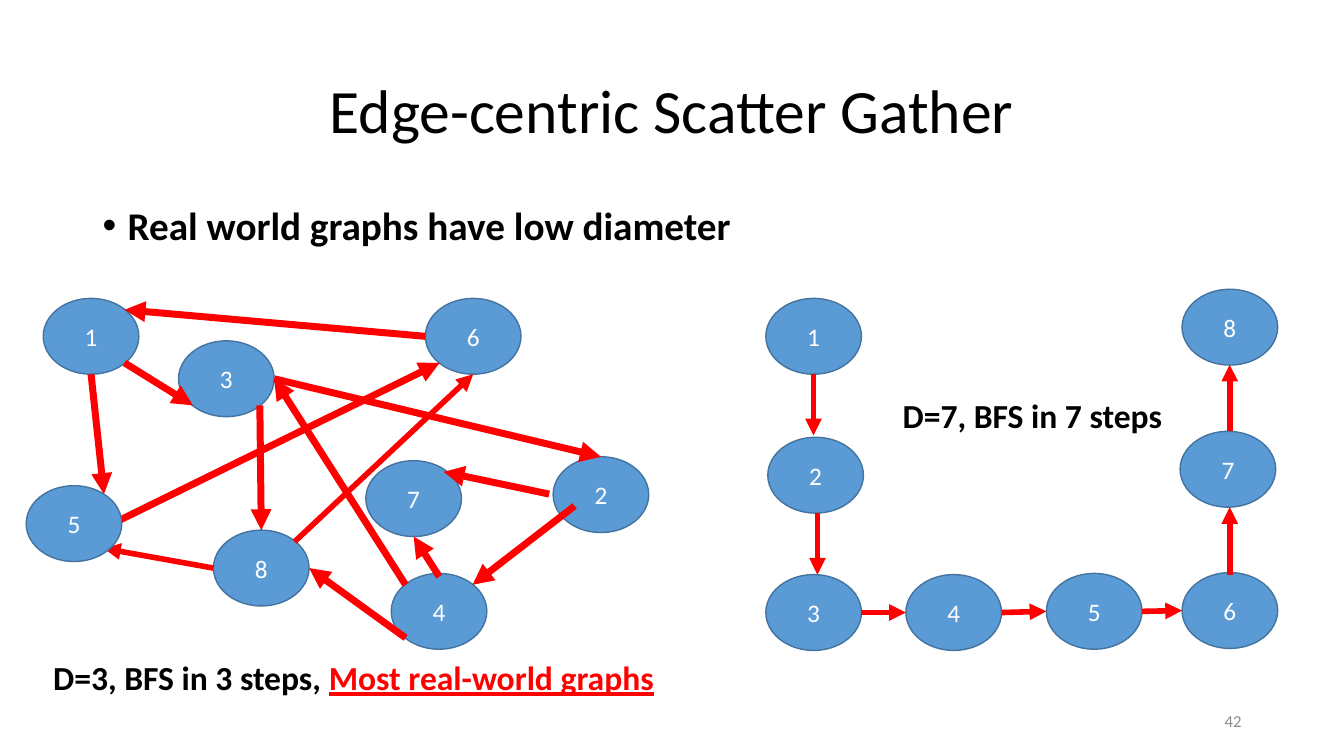
import dataclasses
import pptx
import pptx.util
import pptx.dml.color
import pptx.enum.shapes
import pptx.enum.text
import pptx.oxml.ns
from lxml import etree

Cm = pptx.util.Cm
Pt = pptx.util.Pt
Align = pptx.enum.text.PP_ALIGN
Anchor = pptx.enum.text.MSO_ANCHOR


@dataclasses.dataclass(frozen=True)
class Theme:
    font: str = "Calibri"
    ink: str = "000000"
    white: str = "FFFFFF"
    node: str = "5B9BD5"
    rim: str = "43739E"
    edge: str = "FF0000"
    grey: str = "8C8C8C"
    title: int = 44
    body: int = 28
    note: int = 24
    label: int = 18
    small: int = 12
    thick: int = 5
    thin: int = 4


THEME = Theme()

# Node size and the points on its rim, as shares of width and height
WIDE, HIGH = 2.41, 1.91
NEAR, FAR = 0.15, 0.85
RIM = {"n": (0.5, 0), "e": (1, 0.5), "s": (0.5, 1), "w": (0, 0.5),
       "ne": (FAR, NEAR), "se": (FAR, FAR), "sw": (NEAR, FAR), "nw": (NEAR, NEAR)}

# Nodes: left and top in cm
WEB = {"1": (1.09, 7.52), "6": (10.72, 7.52), "3": (4.5, 8.59), "8": (5.38, 13.36),
       "7": (9.22, 11.61), "4": (9.86, 14.45), "2": (13.94, 11.51), "5": (0.66, 12.24)}
CHAIN = {"1": (19.3, 7.52), "2": (19.35, 11.02), "3": (19.3, 14.48), "4": (22.83, 14.48),
         "5": (26.37, 14.45), "6": (29.79, 14.43), "7": (29.74, 10.87), "8": (29.79, 7.29)}

# Edges: each end is a node with a rim point, or a free point in cm
BOLD = [("1se", "3sw"), ("1s", (2.62, 12.45)), ((2.97, 13.13), "6sw"), ("6w", "1ne"),
        ("3se", "8n"), ("3e", "2n"), ((13.84, 12.45), (11.18, 11.89)),
        ((14.48, 12.75), "4ne"), ((11.07, 14.53), "7s"), ("4nw", "3e"), ("4sw", "8e")]
SLIM = [("8w", (2.62, 13.82)), ("8ne", "6s")]
STEPS = [((20.5, 9.42), (20.5, 10.97)), ((20.6, 12.93), (20.6, 14.48)),
         ("3e", "4w"), ("4e", "5w"), ("5e", "6w"),
         ((30.99, 14.48), (30.99, 12.78)), ((30.99, 10.87), (30.99, 9.19))]


def tint(code):
    return pptx.dml.color.RGBColor.from_string(code)


def write(para, text, size=THEME.note, color=THEME.ink, bold=False, line=False, align=None):
    run = para.add_run()
    run.text = text
    font = run.font
    font.name, font.size, font.bold, font.underline = THEME.font, Pt(size), bold, line
    font.color.rgb = tint(color)
    if align is not None:
        para.alignment = align


def place(shape, left, top, wide, high):
    shape.left, shape.top, shape.width, shape.height = Cm(left), Cm(top), Cm(wide), Cm(high)


def text_box(slide, left, top, wide, high):
    frame = slide.shapes.add_textbox(Cm(left), Cm(top), Cm(wide), Cm(high)).text_frame
    frame.word_wrap = False
    return frame


def bullet(para):
    props = para._p.get_or_add_pPr()
    props.set("marL", str(Cm(0.635)))
    props.set("indent", str(-Cm(0.635)))
    for tag, key, value in (("a:buFont", "typeface", "Arial"), ("a:buChar", "char", "•")):
        etree.SubElement(props, pptx.oxml.ns.qn(tag)).set(key, value)


def node(slide, name, spot):
    oval = slide.shapes.add_shape(pptx.enum.shapes.MSO_SHAPE.OVAL,
                                  *map(Cm, (*spot, WIDE, HIGH)))
    oval.shadow.inherit = False
    oval.fill.solid()
    oval.fill.fore_color.rgb = tint(THEME.node)
    oval.line.color.rgb = tint(THEME.rim)
    oval.line.width = Pt(1)
    frame = oval.text_frame
    frame.vertical_anchor = Anchor.MIDDLE
    write(frame.paragraphs[0], name, size=THEME.label, color=THEME.white, align=Align.CENTER)


def point(nodes, end):
    if isinstance(end, tuple):
        return end
    left, top = nodes[end[0]]
    across, down = RIM[end[1:]]
    return left + across * WIDE, top + down * HIGH


def arrows(slide, nodes, edges, width):
    for start, stop in edges:
        ends = (*point(nodes, start), *point(nodes, stop))
        link = slide.shapes.add_connector(pptx.enum.shapes.MSO_CONNECTOR.STRAIGHT,
                                          *map(Cm, ends))
        link.line.color.rgb = tint(THEME.edge)
        link.line.width = Pt(width)
        tail = etree.SubElement(link.line._get_or_add_ln(), pptx.oxml.ns.qn("a:tailEnd"))
        tail.set("type", "triangle")
        etree.SubElement(link._element.spPr, pptx.oxml.ns.qn("a:effectLst"))


def main():
    deck = pptx.Presentation()
    deck.slide_width, deck.slide_height = Cm(33.87), Cm(19.05)
    slide = deck.slides.add_slide(deck.slide_layouts[1])

    # Title and list
    title, body = slide.placeholders
    place(title, 2.33, 1.01, 29.21, 3.68)
    title.text_frame.vertical_anchor = Anchor.MIDDLE
    para = title.text_frame.paragraphs[0]
    para.line_spacing = 0.9
    write(para, "Edge-centric Scatter Gather", size=THEME.title, align=Align.CENTER)
    place(body, 2.33, 5.07, 29.21, 12.09)
    para = body.text_frame.paragraphs[0]
    para.line_spacing, para.space_before = 0.9, Pt(10)
    bullet(para)
    write(para, "Real world graphs have low diameter", size=THEME.body, bold=True)

    # Graph with a low diameter; node 5 lies over its edges
    *under, over = WEB
    for name in under:
        node(slide, name, WEB[name])
    arrows(slide, WEB, BOLD, THEME.thick)
    arrows(slide, WEB, SLIM, THEME.thin)
    node(slide, over, WEB[over])

    # Chain with a high diameter
    for name, spot in CHAIN.items():
        node(slide, name, spot)
    arrows(slide, CHAIN, STEPS, THEME.thin)

    # Captions
    para = text_box(slide, 1.09, 16.43, 15.8, 1.28).paragraphs[0]
    write(para, "D=3, BFS in 3 steps, ", bold=True)
    write(para, "Most real-world graphs", color=THEME.edge, bold=True, line=True)
    para = text_box(slide, 22.5, 9.83, 7.11, 1.28).paragraphs[0]
    write(para, "D=7, BFS in 7 steps", bold=True)

    # Slide number
    frame = text_box(slide, 23.92, 17.66, 7.62, 1.01)
    frame.word_wrap = True
    frame.vertical_anchor = Anchor.MIDDLE
    write(frame.paragraphs[0], "42", size=THEME.small, color=THEME.grey, align=Align.RIGHT)

    deck.save("out.pptx")


if __name__ == "__main__":
    main()
